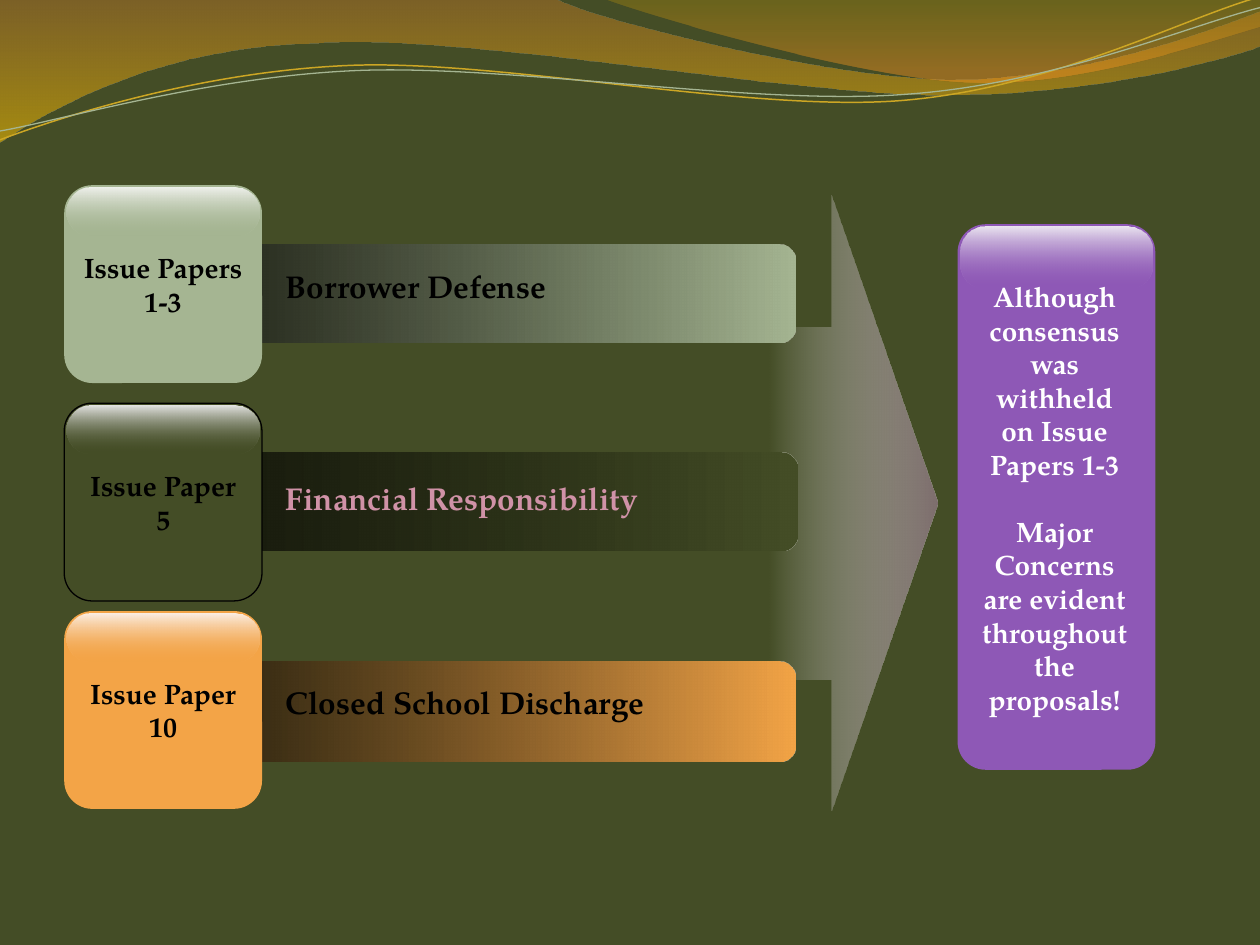
"""Build a slide of issue papers leading through an arrow to a consensus note."""
from dataclasses import dataclass
from math import cos, radians, sin
from typing import Optional

from lxml.etree import SubElement
from pptx import Presentation
from pptx.dml.color import RGBColor
from pptx.enum.shapes import MSO_SHAPE as SHAPE
from pptx.enum.text import MSO_ANCHOR as ANCHOR, PP_ALIGN as ALIGN
from pptx.oxml import parse_xml
from pptx.oxml.ns import nsdecls, qn
from pptx.util import Inches, Pt

FONT = "TeX Gyre Pagella"
OLIVE = RGBColor(0x44, 0x4D, 0x26)
SAGE = RGBColor(0xA5, 0xB5, 0x92)
ORANGE = RGBColor(0xF3, 0xA4, 0x47)
PURPLE = RGBColor(0x8E, 0x58, 0xB6)
PINK = RGBColor(0xD0, 0x92, 0xA7)
GOLD = RGBColor(0xCC, 0xA6, 0x24)
BLACK = RGBColor(0, 0, 0)
WHITE = RGBColor(0xFF, 0xFF, 0xFF)
TAUPE = RGBColor(0x7F, 0x6F, 0x6F)
MIST = RGBColor(0xF1, 0xF0, 0xF0)
BRONZE = RGBColor(0xC0, 0x7A, 0x28)
YELLOW = RGBColor(0xF7, 0xBF, 0x00)
MUSTARD = RGBColor(0xC0, 0x97, 0x09)
AMBER = RGBColor(0xF5, 0x93, 0x20)
SAGE_SHINE = RGBColor(0xEF, 0xF1, 0xEC)
OLIVE_SHINE = RGBColor(0xE6, 0xE6, 0xE5)
ORANGE_SHINE = RGBColor(0xFC, 0xEF, 0xE6)
PURPLE_SHINE = RGBColor(0xEC, 0xE7, 0xF1)

Point = tuple[float, float]
Box = tuple[float, float, float, float]
Stop = tuple[int, RGBColor, int]
TILE_LEFT, TILE_SIZE, INSET = 0.51, 1.57, 0.02


@dataclass
class Wave:
    box: Box
    start: Point
    segments: list[tuple[Point, ...]]
    stops: Optional[list[Stop]] = None
    line: Optional[RGBColor] = None
    width: float = 0.75
    tilt: float = 0


@dataclass
class Issue:
    label: list[str]
    title: str
    color: RGBColor
    shine: RGBColor
    tile_top: float
    bar: Box
    title_top: float
    title_color: RGBColor = BLACK
    outline: Optional[RGBColor] = None


WAVES = [
    Wave((-0.01, -0.01, 10.02, 1.14), (0, 0), [
        ((4.4, -0.01),),
        ((4.76, 0.17), (6.64, 0.63), (7.58, 0.63)),
        ((8.53, 0.63), (9.58, 0.26), (10, 0.09)),
        ((10.01, 0.36),),
        ((9.83, 0.44), (8.7, 0.76), (7.46, 0.75)),
        ((6.22, 0.75), (3.82, 0.28), (2.57, 0.34)),
        ((1.29, 0.36), (0.46, 0.83), (-0.01, 1.13)),
        ((0, 0),),
    ], stops=[(0, BRONZE, 45), (100, YELLOW, 55)]),
    Wave((4.79, -0.01, 5.21, 0.7), (4.79, -0.01), [
        ((5.09, 0.11), (6.82, 0.62), (7.69, 0.65)),
        ((8.56, 0.69), (9.61, 0.32), (10, 0.21)),
        ((10, 0),),
        ((4.79, -0.01),),
    ], stops=[(0, MUSTARD, 30), (80, AMBER, 45)]),
    Wave((-0.02, 0.22, 10.02, 0.71), (0, 1.11), [
        ((0.48, 0.93), (1.58, 0.57), (2.77, 0.52)),
        ((3.95, 0.47), (5.93, 0.89), (7.13, 0.8)),
        ((8.33, 0.71), (9.38, 0.15), (9.98, -0.02)),
    ], line=GOLD, width=0.85, tilt=-2.7),
    Wave((-0.02, 0.3, 10.03, 0.58), (0, 1.04), [
        ((0.47, 0.96), (1.64, 0.61), (2.83, 0.56)),
        ((4.03, 0.51), (5.97, 0.84), (7.17, 0.75)),
        ((8.36, 0.67), (9.41, 0.21), (10, 0.06)),
    ], line=SAGE, tilt=-2.7),
]

ISSUES = [
    Issue(["Issue Papers", "1-3"], "Borrower Defense", SAGE, SAGE_SHINE,
          1.47, (0.73, 1.94, 5.58, 0.78), 2.07),
    Issue(["Issue Paper", "5"], "Financial Responsibility", OLIVE, OLIVE_SHINE,
          3.2, (0.67, 3.59, 5.66, 0.78), 3.75, PINK, BLACK),
    Issue(["Issue Paper", "10"], "Closed School Discharge", ORANGE, ORANGE_SHINE,
          4.85, (0.73, 5.25, 5.58, 0.79), 5.37),
]

NOTE = ["Although consensus was withheld on Issue Papers 1-3",
        "Major Concerns", "are evident throughout the proposals!"]


def set_gradient(s, stops: list[Stop], angle: int = 90) -> None:
    s.fill.solid()
    marks = "".join(
        f'<a:gs pos="{pos * 1000}"><a:srgbClr val="{color}">'
        f'<a:alpha val="{opacity * 1000}"/></a:srgbClr></a:gs>'
        for pos, color, opacity in stops)
    grad = parse_xml(
        f'<a:gradFill {nsdecls("a")} rotWithShape="1"><a:gsLst>{marks}</a:gsLst>'
        f'<a:lin ang="{angle * 60000}" scaled="0"/></a:gradFill>')
    sp_pr = s._element.spPr
    sp_pr.replace(sp_pr.find(qn("a:solidFill")), grad)


def set_line(s, color: Optional[RGBColor], width: float = 0.75) -> None:
    s.shadow.inherit = False
    if color is None:
        s.line.fill.background()
    else:
        s.line.color.rgb = color
        s.line.width = Pt(width)


def to_local(point: Point, box: Box, tilt: float) -> Point:
    left, top, width, height = box
    dx, dy = point[0] - left - width / 2, point[1] - top - height / 2
    c, n = cos(radians(tilt)), sin(radians(tilt))
    return dx * c + dy * n + width / 2, dy * c - dx * n + height / 2


def add_wave(slide, wave: Wave) -> None:
    left, top, width, height = map(Inches, wave.box)
    builder = slide.shapes.build_freeform(left, top)
    builder.add_line_segments([(left + width, top + height)], close=False)
    s = builder.convert_to_shape()
    s.rotation = wave.tilt
    outline = s._element.spPr.find(".//" + qn("a:path"))
    for child in list(outline):
        outline.remove(child)
    steps = [("a:moveTo", (wave.start,))]
    steps += [("a:lnTo" if len(seg) == 1 else "a:cubicBezTo", seg) for seg in wave.segments]
    for tag, points in steps:
        step = SubElement(outline, qn(tag))
        for point in points:
            x, y = to_local(point, wave.box, wave.tilt)
            SubElement(step, qn("a:pt"), x=str(int(Inches(x))), y=str(int(Inches(y))))
    set_line(s, wave.line, wave.width)
    if wave.stops:
        SubElement(outline, qn("a:close"))
        set_gradient(s, wave.stops)
    else:
        s.fill.background()


def add_box(slide, kind, box: Box, adjustments: list[float],
            outline: Optional[RGBColor] = None):
    s = slide.shapes.add_shape(kind, *map(Inches, box))
    for i, value in enumerate(adjustments):
        s.adjustments[i] = value
    set_line(s, outline)
    return s


def add_glossy(slide, box: Box, color: RGBColor, shine: RGBColor, gloss_height: float,
               gloss_round: float, outline: Optional[RGBColor] = None):
    left, top, width, _ = box
    s = add_box(slide, SHAPE.ROUNDED_RECTANGLE, box, [0.142], outline)
    s.fill.solid()
    s.fill.fore_color.rgb = color
    gloss_box = (left + INSET, top + INSET, width - 2 * INSET, gloss_height)
    gloss = add_box(slide, SHAPE.ROUNDED_RECTANGLE, gloss_box, [gloss_round])
    set_gradient(gloss, [(0, shine, 100), (100, color, 0)])
    return s


def write(tf, lines: list[str], *, size: int = 16, color: RGBColor = BLACK,
          align=ALIGN.CENTER, anchor=ANCHOR.TOP, wrap: bool = True) -> None:
    tf.word_wrap = wrap
    tf.vertical_anchor = anchor
    for i, line in enumerate(lines):
        p = tf.paragraphs[0] if i == 0 else tf.add_paragraph()
        p.alignment = align
        r = p.add_run()
        r.text = line
        r.font.name, r.font.size, r.font.bold = FONT, Pt(size), True
        r.font.color.rgb = color


def main() -> None:
    prs = Presentation()
    prs.slide_width, prs.slide_height = Inches(10), Inches(7.5)
    slide = prs.slides.add_slide(prs.slide_layouts[6])
    slide.background.fill.solid()
    slide.background.fill.fore_color.rgb = OLIVE
    for wave in WAVES:
        add_wave(slide, wave)
    arrow = add_box(slide, SHAPE.UP_ARROW, (4.33, 3.32, 4.88, 1.34), [0.573, 0.628])
    arrow.rotation = 90
    set_gradient(arrow, [(0, TAUPE, 100), (100, MIST, 0)])
    for issue in ISSUES:
        bar = add_box(slide, SHAPE.ROUNDED_RECTANGLE, issue.bar, [0.167])
        bar._element.spPr.find(qn("a:xfrm")).set("flipH", "1")
        set_gradient(bar, [(0, issue.color, 100), (100, BLACK, 75)], angle=0)
        title = slide.shapes.add_textbox(*map(Inches, (2.17, issue.title_top, 4.16, 0.5)))
        write(title.text_frame, [issue.title], size=18, color=issue.title_color, align=ALIGN.LEFT)
        tile = add_glossy(slide, (TILE_LEFT, issue.tile_top, TILE_SIZE, TILE_SIZE),
                          issue.color, issue.shine, 0.38, 0.5, issue.outline)
        write(tile.text_frame, issue.label, anchor=ANCHOR.MIDDLE, wrap=False)
    add_glossy(slide, (7.6, 1.78, TILE_SIZE, 4.33), PURPLE, PURPLE_SHINE, 0.49, 0.4)
    note = slide.shapes.add_textbox(*map(Inches, (7.67, 2.17, 1.4, 3.6)))
    write(note.text_frame, NOTE, color=WHITE)
    note.text_frame.paragraphs[1].space_before = Pt(19)
    prs.save("out.pptx")


if __name__ == "__main__":
    main()
